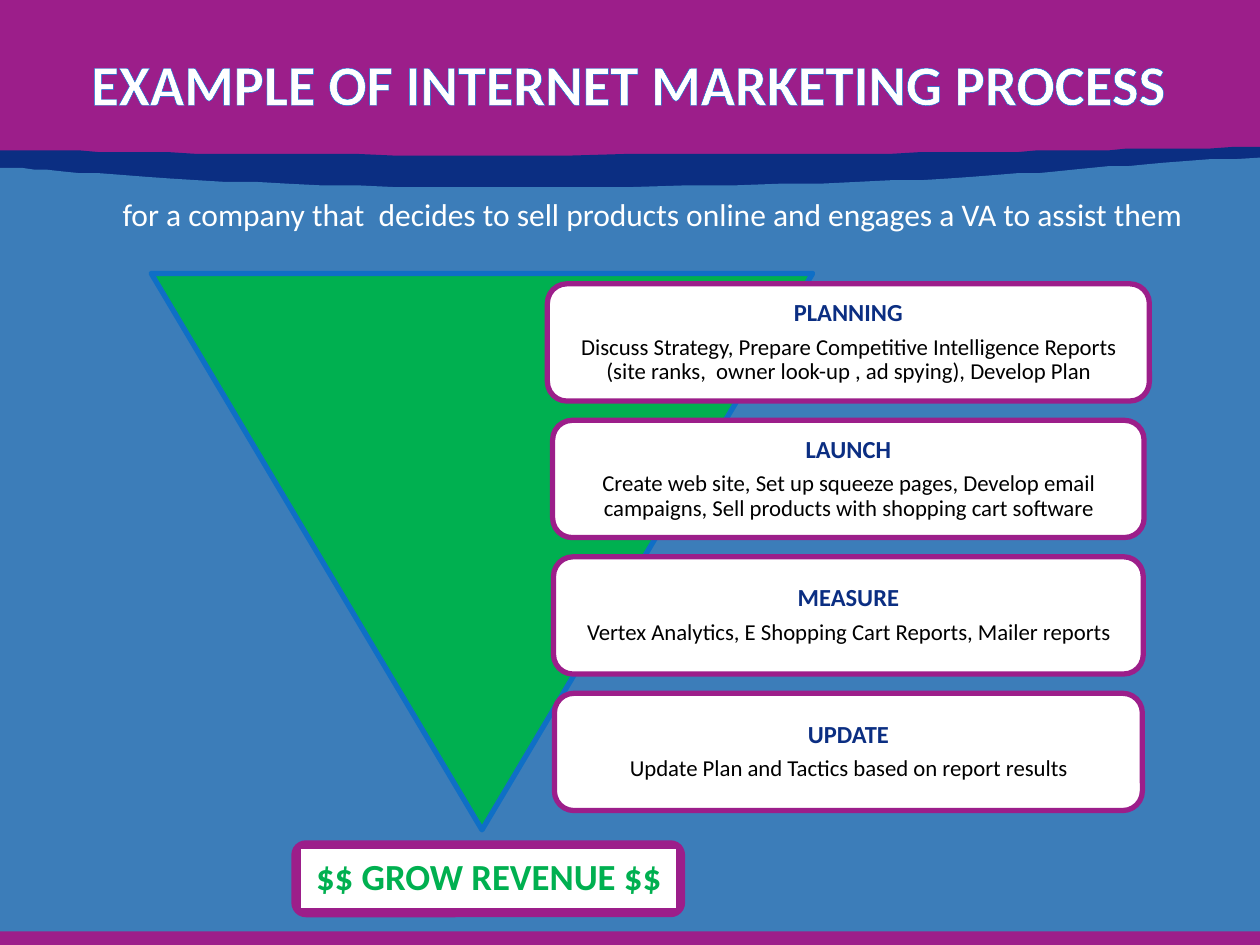
from lxml import etree
from pptx import Presentation
from pptx.dml.color import RGBColor
from pptx.enum import shapes, text
from pptx.oxml.ns import qn
from pptx.util import Pt

# Content
TITLE = "EXAMPLE OF INTERNET MARKETING PROCESS"
SUBTITLE = "for a company that  decides to sell products online and engages a VA to assist them"
RESULT = "$$ GROW REVENUE $$"
STAGES = [  # heading, detail, card width
    ("PLANNING", "Discuss Strategy, Prepare Competitive Intelligence Reports "
                 "(site ranks,  owner look-up , ad spying), Develop Plan", 344),
    ("LAUNCH", "Create web site, Set up squeeze pages, Develop email campaigns, "
               "Sell products with shopping cart software", 338),
    ("MEASURE", "Vertex Analytics, E Shopping Cart Reports, Mailer reports", 337),
    ("UPDATE", "Update Plan and Tactics based on report results", 336),
]
# Waves: start point, two curves of three control points each, bottom edge
WAVES = [
    ("navy", (-2, 85.7), [[(-2, 85), (116, 89.3), (322.6, 88.6)],
                          [(613.4, 87.8), (587.5, 85.7), (720, 84.2)]], 210),
    ("blue", (-2, 96.5), [[(-2, 92.9), (116, 108.7), (323.3, 107.3)],
                          [(614.2, 103.7), (588.2, 95.8), (720.7, 90)]], 540),
]

THEME = {
    "font": "Calibri",
    "color": {name: RGBColor.from_string(value) for name, value in {
        "purple": "9C1E8A", "navy": "0B2E82", "blue": "3C7DB9", "edge": "0F6FC6",
        "outline": "0070D5", "green": "00B050", "white": "FFFFFF", "black": "000000"}.items()},
    "size": {"title": 32.4, "subtitle": 18, "heading": 14, "detail": 13, "result": 21},
}
LINE_WIDTH = 3
CARD_CENTER, CARD_TOP, CARD_HEIGHT, CARD_STEP = 484.8, 162.2, 67, 78
CARD_PAD = 3.4
CURVE_STEPS = 24

prs = Presentation()
prs.slide_width, prs.slide_height = Pt(720), Pt(540)
slide = prs.slides.add_slide(prs.slide_layouts[5])


def paint(sp, fill, line=None):
    sp.shadow.inherit = False
    sp.fill.solid()
    sp.fill.fore_color.rgb = THEME["color"][fill]
    if line:
        sp.line.color.rgb = THEME["color"][line]
        sp.line.width = Pt(LINE_WIDTH)
    else:
        sp.line.fill.background()
    return sp


def add_shape(kind, box, fill, line=None):
    sp = slide.shapes.add_shape(kind, *(Pt(v) for v in box))
    return paint(sp, fill, line)


def write(sp, lines, pad=None, spaced=False):
    """Fill a shape with centred lines of (text, size name, colour, bold)."""
    tf = sp.text_frame
    tf.word_wrap = True
    tf.vertical_anchor = text.MSO_ANCHOR.MIDDLE
    if pad is not None:
        tf.margin_left = tf.margin_right = tf.margin_top = tf.margin_bottom = Pt(pad)
    for i, (words, size, color, bold) in enumerate(lines):
        p = tf.add_paragraph() if i else tf.paragraphs[0]
        p.text = words
        p.alignment = text.PP_ALIGN.CENTER
        if spaced:
            p.line_spacing = 0.9
            p.space_after = Pt(0.35 * THEME["size"][size])
        font = p.runs[0].font
        font.name, font.size, font.bold = THEME["font"], Pt(THEME["size"][size]), bold
        font.color.rgb = THEME["color"][color]


def add_text(box, lines, **options):
    sp = slide.shapes.add_textbox(*(Pt(v) for v in box))
    write(sp, lines, **options)
    return sp


def bezier(start, curve):
    """Points along a cubic curve, after its start."""
    for i in range(1, CURVE_STEPS + 1):
        t = i / CURVE_STEPS
        weights = ((1 - t) ** 3, 3 * t * (1 - t) ** 2, 3 * t * t * (1 - t), t ** 3)
        yield tuple(sum(w * pt[axis] for w, pt in zip(weights, (start, *curve)))
                    for axis in (0, 1))


# Backdrop: header, two waves, footer
RECT, ROUND = shapes.MSO_SHAPE.RECTANGLE, shapes.MSO_SHAPE.ROUNDED_RECTANGLE
add_shape(RECT, (-2, 0, 723, 126), "purple")
for color, start, curves, bottom in WAVES:
    points = [start]
    for curve in curves:
        points += bezier(points[-1], curve)
    points += [(points[-1][0], bottom), (start[0], bottom)]
    path = slide.shapes.build_freeform(*start, scale=Pt(1))
    path.add_line_segments(points[1:], close=True)
    paint(path.convert_to_shape(), color)
add_shape(RECT, (-2, 532.2, 723, 12), "purple")

# Title, brought in front of the backdrop, with outlined letters
title = slide.shapes.title
title.left, title.top, title.width, title.height = Pt(35.3), Pt(2.2), Pt(648), Pt(90)
write(title, [(TITLE, "title", "white", True)])
slide.shapes._spTree.append(title._element)
ln = etree.Element(qn("a:ln"), w=str(Pt(1)))
fill = etree.SubElement(ln, qn("a:solidFill"))
etree.SubElement(fill, qn("a:srgbClr"), val=str(THEME["color"]["outline"]))
title.text_frame.paragraphs[0].runs[0].font._element.insert(0, ln)

# Funnel
funnel = add_shape(shapes.MSO_SHAPE.ISOSCELES_TRIANGLE, (86.4, 156.2, 378, 318), "green", "edge")
funnel.rotation = 180

# Stage cards
for i, (heading, detail, width) in enumerate(STAGES):
    left, top = CARD_CENTER - width / 2, CARD_TOP + i * CARD_STEP
    add_shape(ROUND, (left, top, width, CARD_HEIGHT), "white", "purple")
    add_text((left + CARD_PAD, top + CARD_PAD, width - 2 * CARD_PAD, CARD_HEIGHT - 2 * CARD_PAD),
             [(heading, "heading", "navy", True), (detail, "detail", "black", False)],
             pad=4.2, spaced=True)

# Result
add_shape(ROUND, (168, 481.7, 222, 41), "white", "purple")
result = add_shape(RECT, (170.6, 483.8, 217.4, 36.7), "white", "purple")
write(result, [(RESULT, "result", "green", True)], pad=6.3, spaced=True)

# Subtitle
add_text((56.2, 108, 633.6, 29), [(SUBTITLE, "subtitle", "white", False)])

prs.save("out.pptx")
